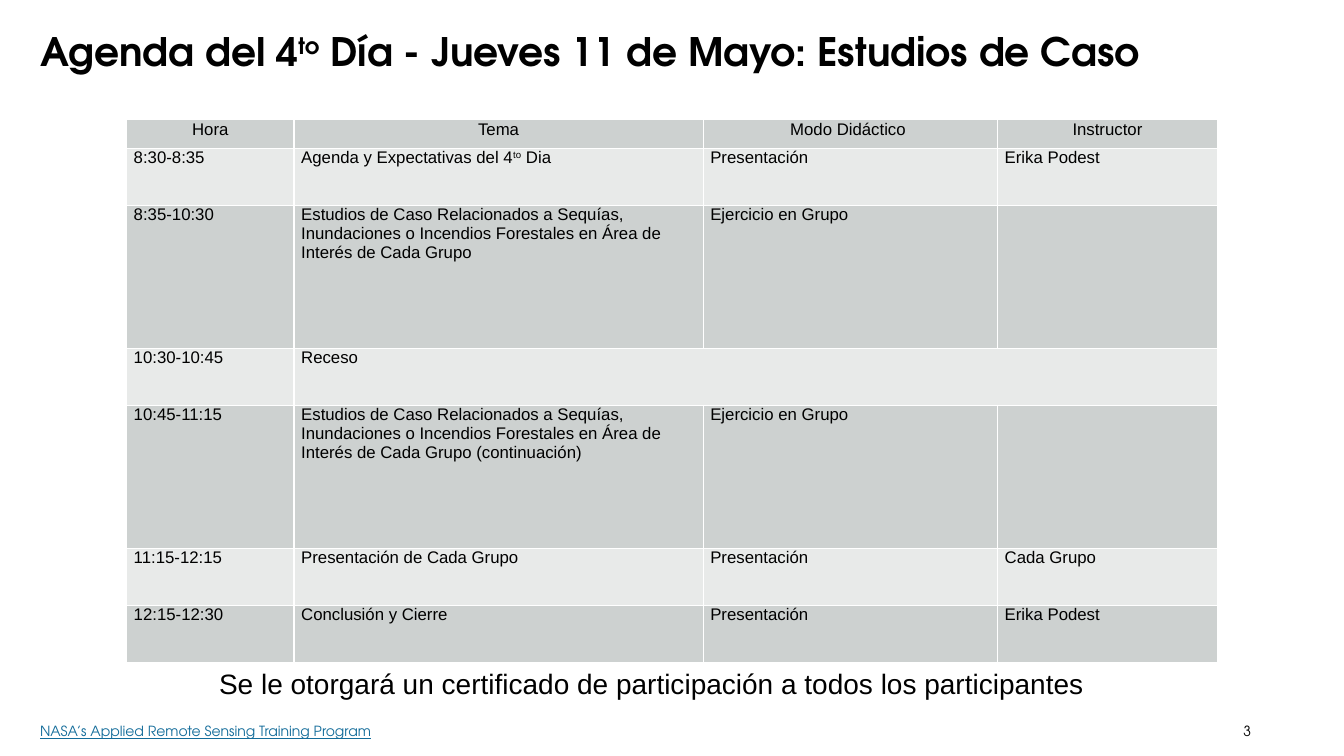
from dataclasses import dataclass

from lxml.etree import SubElement
from pptx import Presentation
from pptx.dml.color import RGBColor as Color
from pptx.enum.text import MSO_ANCHOR as Anchor, PP_ALIGN as Align
from pptx.oxml.ns import qn
from pptx.util import Cm, Pt


@dataclass(frozen=True)
class Theme:
    ink: Color = Color.from_string("000000")
    link: Color = Color.from_string("136C9A")
    bands: tuple = (Color.from_string("CDD1D0"), Color.from_string("E8EAE9"))
    border: str = "FFFFFF"
    border_width: int = Pt(1)
    heading_font: str = "TeX Gyre Adventor"
    body_font: str = "Arial"
    title_size: int = Pt(28)
    notice_size: int = Pt(20)
    table_size: int = Pt(12)
    footer_size: int = Pt(10)


@dataclass(frozen=True)
class Box:
    left: float
    top: float
    width: float
    height: float

    def lengths(self):
        return Cm(self.left), Cm(self.top), Cm(self.width), Cm(self.height)


THEME = Theme()
CASE_STUDIES = (
    "Estudios de Caso Relacionados a Sequías, Inundaciones o Incendios "
    "Forestales en Área de Interés de Cada Grupo"
)
AGENDA = [
    ("Hora", "Tema", "Modo Didáctico ", "Instructor"),
    ("8:30-8:35", "Agenda y Expectativas del 4^to^ Dia", "Presentación", "Erika Podest"),
    ("8:35-10:30", CASE_STUDIES, "Ejercicio en Grupo", ""),
    ("10:30-10:45", "Receso"),
    ("10:45-11:15", f"{CASE_STUDIES} (continuación)", "Ejercicio en Grupo", ""),
    ("11:15-12:15", "Presentación de Cada Grupo", "Presentación", "Cada Grupo"),
    ("12:15-12:30", "Conclusión y Cierre", "Presentación", "Erika Podest"),
]
COLUMN_WIDTHS = (4.22, 10.31, 7.42, 5.54)
HEADER_HEIGHT, SHORT_HEIGHT, TALL_HEIGHT = 0.72, 1.44, 3.6


def write(para, text, font, size, color=THEME.ink, bold=False, align=Align.LEFT):
    for index, part in enumerate(text.split("^")):
        span = para.add_run()
        span.text = part
        if index % 2:
            span.font._element.set("baseline", "30000")
    para.alignment = align
    para.font.name = font
    para.font.size = size
    para.font.bold = bold
    para.font.color.rgb = color


def add_text(page, box, text, font, size, wrap=True, **style):
    frame = page.shapes.add_textbox(*box.lengths()).text_frame
    frame.word_wrap = wrap
    write(frame.paragraphs[0], text, font, size, **style)
    return frame


def add_heading_text(page, box, text, size, **style):
    frame = add_text(page, box, text, THEME.heading_font, size, **style)
    frame.margin_left = frame.margin_right = Cm(0.34)
    frame.margin_top = frame.margin_bottom = Cm(0.17)
    return frame


def add_title(page, box):
    text = "Agenda del 4^to^ Día - Jueves 11 de Mayo: Estudios de Caso"
    frame = add_heading_text(page, box, text, THEME.title_size, bold=True)
    frame.vertical_anchor = Anchor.MIDDLE


def set_borders(cell):
    properties = cell._tc.get_or_add_tcPr()
    for position, side in enumerate(("a:lnL", "a:lnR", "a:lnT", "a:lnB")):
        line = SubElement(properties, qn(side), w=str(THEME.border_width))
        fill = SubElement(line, qn("a:solidFill"))
        SubElement(fill, qn("a:srgbClr"), val=THEME.border)
        properties.insert(position, line)


def style_cell(cell, color):
    cell.fill.solid()
    cell.fill.fore_color.rgb = color
    cell.margin_left = cell.margin_right = Cm(0.18)
    cell.margin_top = cell.margin_bottom = 0
    set_borders(cell)


def row_height(index, entries):
    if index == 0:
        return HEADER_HEIGHT
    return TALL_HEIGHT if CASE_STUDIES in entries[1] else SHORT_HEIGHT


def add_agenda(page, box):
    table = page.shapes.add_table(
        len(AGENDA), len(COLUMN_WIDTHS), *box.lengths()
    ).table
    for column, width in zip(table.columns, COLUMN_WIDTHS):
        column.width = Cm(width)
    for index, entries in enumerate(AGENDA):
        table.rows[index].height = Cm(row_height(index, entries))
        cells = list(table.rows[index].cells)
        for cell in cells:
            style_cell(cell, THEME.bands[index % 2])
        if len(entries) < len(cells):
            cells[len(entries) - 1].merge(cells[-1])
        align = Align.LEFT if index else Align.CENTER
        for cell, text in zip(cells, entries):
            if text:
                para = cell.text_frame.paragraphs[0]
                write(para, text, THEME.body_font, THEME.table_size, align=align)


def add_notice(page, box):
    text = "Se le otorgará un certificado de participación a todos los participantes"
    add_text(page, box, text, THEME.body_font, THEME.notice_size, wrap=False)


def add_footer(page, box):
    program = Box(box.left, box.top, 10.9, box.height)
    number_width = 1.93
    number = Box(
        box.left + box.width - number_width, box.top, number_width, box.height
    )
    frame = add_heading_text(
        page, program, "NASA’s Applied Remote Sensing Training Program",
        THEME.footer_size, color=THEME.link,
    )
    frame.paragraphs[0].font.underline = True
    add_heading_text(page, number, "3", THEME.footer_size, align=Align.RIGHT)


def main():
    deck = Presentation()
    deck.slide_width, deck.slide_height = Cm(33.87), Cm(19.05)
    page = deck.slides.add_slide(deck.slide_layouts[6])
    add_footer(page, Box(0.67, 18.03, 31.2, 0.76))
    add_title(page, Box(0.67, 0.48, 33.2, 1.6))
    add_agenda(page, Box(3.19, 3.02, 27.49, 13.68))
    add_notice(page, Box(5.27, 16.66, 22.86, 1.11))
    deck.save("out.pptx")


if __name__ == "__main__":
    main()
